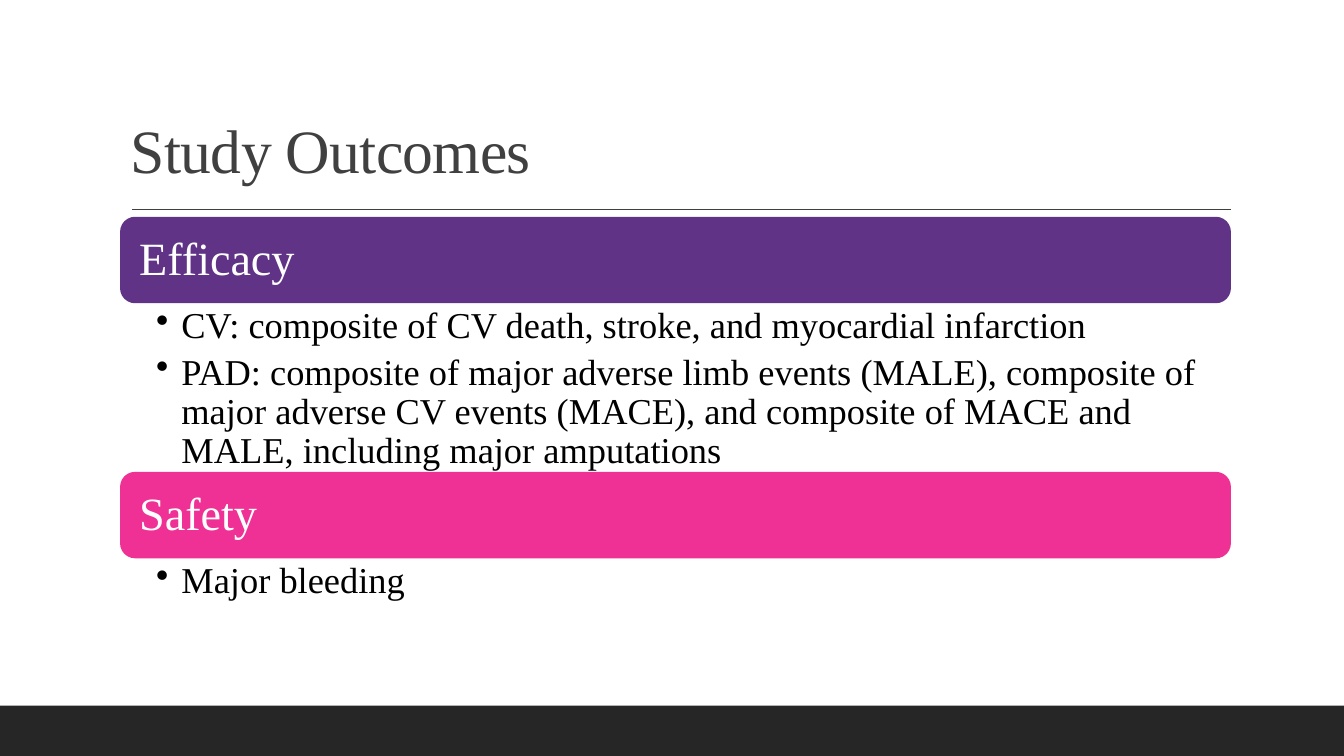
from dataclasses import dataclass

from lxml import etree
from pptx import Presentation
from pptx import util as u
from pptx.dml.color import RGBColor
from pptx.enum import shapes, text
from pptx.oxml import ns

PX = u.Inches(1) // 100


@dataclass(frozen=True)
class Theme:
    font: str = "Times New Roman"
    title_size: int = 44
    heading_size: int = 33
    bullet_size: int = 26
    title: str = "404040"
    footer: str = "262626"
    heading: str = "FFFFFF"
    body: str = "000000"
    purple: str = "603386"
    pink: str = "EF3094"


@dataclass(frozen=True)
class Box:
    left: int
    top: int
    width: int
    height: int

    def emu(self) -> tuple[int, ...]:
        return tuple(n * PX for n in (self.left, self.top, self.width, self.height))


@dataclass(frozen=True)
class Outcome:
    heading: str
    color: str
    top: int
    bullets_height: int
    bullets: tuple[str, ...]


THEME = Theme()
LEFT, WIDTH, BAR_HEIGHT, BAR_INSET = 120, 1100, 84, 4
OUTCOMES = (
    Outcome("Efficacy", THEME.purple, 216, 168, (
        "CV: composite of CV death, stroke, and myocardial infarction",
        "PAD: composite of major adverse limb events (MALE), composite of major "
        "adverse CV events (MACE), and composite of MACE and MALE, including "
        "major amputations",
    )),
    Outcome("Safety", THEME.pink, 469, 60, ("Major bleeding",)),
)


def add_panel(page, kind, box: Box, color: str):
    panel = page.shapes.add_shape(kind, *box.emu())
    panel.shadow.inherit = False
    panel.fill.solid()
    panel.fill.fore_color.rgb = RGBColor.from_string(color)
    panel.line.fill.background()
    return panel


def add_frame(page, box: Box, insets: tuple[int, int, int, int], anchor):
    """Add a wrapping text box; insets run left, top, right, bottom."""
    frame = page.shapes.add_textbox(*box.emu()).text_frame
    frame.word_wrap = True
    frame.vertical_anchor = anchor
    (frame.margin_left, frame.margin_top,
     frame.margin_right, frame.margin_bottom) = (n * PX for n in insets)
    return frame


def write(para, words: str, size: int, color: str):
    para.line_spacing = 0.9
    span = para.add_run()
    span.text = words
    span.font.name = THEME.font
    span.font.size = u.Pt(size)
    span.font.color.rgb = RGBColor.from_string(color)
    return span


def add_bullet(para) -> None:
    props = para._p.get_or_add_pPr()
    props.set("marL", str(25 * PX))
    props.set("indent", str(-25 * PX))
    etree.SubElement(props, ns.qn("a:buChar")).set("char", "•")


def add_title(page) -> None:
    frame = add_frame(page, Box(LEFT, 31, WIDTH, 159), (10, 5, 10, 5),
                      text.MSO_ANCHOR.BOTTOM)
    span = write(frame.paragraphs[0], "Study Outcomes", THEME.title_size, THEME.title)
    span._r.get_or_add_rPr().set("spc", "-50")


def add_rule(page) -> None:
    rule = page.shapes.add_connector(
        shapes.MSO_CONNECTOR.STRAIGHT, 131 * PX, 208 * PX, 1221 * PX, 208 * PX)
    rule.line.color.rgb = RGBColor.from_string(THEME.title)
    rule.line.width = u.Pt(1)
    etree.SubElement(rule._element.spPr, ns.qn("a:effectLst"))


def add_outcome(page, outcome: Outcome) -> None:
    bar = add_panel(page, shapes.MSO_SHAPE.ROUNDED_RECTANGLE,
                    Box(LEFT, outcome.top, WIDTH, BAR_HEIGHT), outcome.color)
    bar.line.color.rgb = RGBColor.from_string(outcome.color)
    bar.line.width = u.Pt(1.25)

    heading_box = Box(LEFT + BAR_INSET, outcome.top + BAR_INSET,
                      WIDTH - 2 * BAR_INSET, BAR_HEIGHT - 2 * BAR_INSET)
    frame = add_frame(page, heading_box, (14, 14, 14, 14), text.MSO_ANCHOR.MIDDLE)
    write(frame.paragraphs[0], outcome.heading, THEME.heading_size, THEME.heading)

    bullets_box = Box(LEFT, outcome.top + BAR_HEIGHT, WIDTH, outcome.bullets_height)
    frame = add_frame(page, bullets_box, (35, 5, 26, 5), text.MSO_ANCHOR.TOP)
    for index, words in enumerate(outcome.bullets):
        para = frame.add_paragraph() if index else frame.paragraphs[0]
        para.space_after = u.Pt(5)
        write(para, words, THEME.bullet_size, THEME.body)
        add_bullet(para)


def main() -> None:
    deck = Presentation()
    deck.slide_width, deck.slide_height = 1333 * PX, 750 * PX
    page = deck.slides.add_slide(deck.slide_layouts[6])
    add_panel(page, shapes.MSO_SHAPE.RECTANGLE, Box(0, 700, 1333, 50), THEME.footer)
    add_rule(page)
    add_title(page)
    for outcome in OUTCOMES:
        add_outcome(page, outcome)
    deck.save("out.pptx")


if __name__ == "__main__":
    main()
